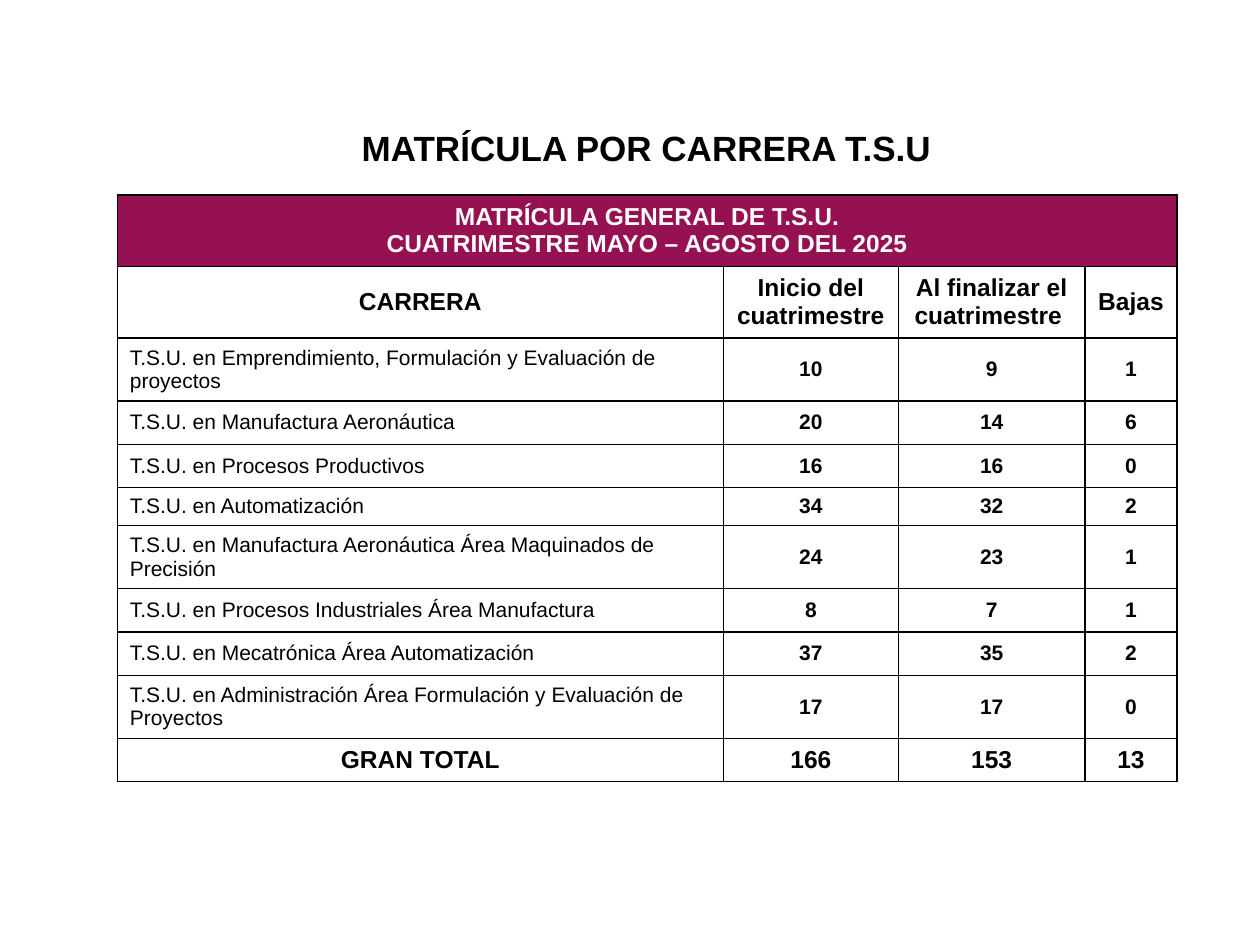
import dataclasses

import lxml.etree
import pptx
import pptx.dml.color
import pptx.enum.text
import pptx.oxml.ns
import pptx.util

Pt = pptx.util.Pt
CENTER = pptx.enum.text.PP_ALIGN.CENTER
LEFT = pptx.enum.text.PP_ALIGN.LEFT
MIDDLE = pptx.enum.text.MSO_ANCHOR.MIDDLE


@dataclasses.dataclass(frozen=True)
class Theme:
    font: str = "Arial"
    black: str = "000000"
    white: str = "FFFFFF"
    banner: str = "961151"
    title_size: float = 20
    heading_size: float = 14
    body_size: float = 12
    border_width: float = 1


class SlideBuilder:
    def __init__(self, slide, theme):
        self.slide = slide
        self.theme = theme

    def set_text(self, text_frame, text, size, color, bold=True, alignment=CENTER):
        text_frame.text = text
        text_frame.word_wrap = True
        for paragraph in text_frame.paragraphs:
            paragraph.alignment = alignment
            paragraph.font.name = self.theme.font
            paragraph.font.size = Pt(size)
            paragraph.font.bold = bold
            paragraph.font.color.rgb = pptx.dml.color.RGBColor.from_string(color)

    def title(self, text, left, top, width, height):
        shape = self.slide.shapes.title
        shape.left, shape.top = Pt(left), Pt(top)
        shape.width, shape.height = Pt(width), Pt(height)
        self.set_text(shape.text_frame, text, self.theme.title_size, self.theme.black)
        shape.text_frame.auto_size = pptx.enum.text.MSO_AUTO_SIZE.SHAPE_TO_FIT_TEXT

    def table(self, left, top, widths, heights):
        shape = self.slide.shapes.add_table(
            len(heights), len(widths), Pt(left), Pt(top), Pt(sum(widths)), Pt(sum(heights)))
        table = shape.table
        table.first_row = table.horz_banding = False
        for column, width in zip(table.columns, widths):
            column.width = Pt(width)
        for row, height in zip(table.rows, heights):
            row.height = Pt(height)
        for cell in table.iter_cells():
            self.borders(cell)
            self.fill(cell, self.theme.white)
            cell.vertical_anchor = MIDDLE
        return table

    def fill(self, cell, color):
        cell.fill.solid()
        cell.fill.fore_color.rgb = pptx.dml.color.RGBColor.from_string(color)

    def borders(self, cell):
        qn = pptx.oxml.ns.qn
        properties = cell._tc.get_or_add_tcPr()
        for side in ("a:lnL", "a:lnR", "a:lnT", "a:lnB"):
            line = lxml.etree.SubElement(
                properties, qn(side), w=str(Pt(self.theme.border_width)))
            solid = lxml.etree.SubElement(line, qn("a:solidFill"))
            lxml.etree.SubElement(solid, qn("a:srgbClr"), val=self.theme.black)

    def banner(self, table, text):
        cell = table.cell(0, 0)
        cell.merge(table.cell(0, len(table.columns) - 1))
        self.fill(cell, self.theme.banner)
        self.set_text(cell.text_frame, text, self.theme.heading_size, self.theme.white)

    def heading_row(self, table, row, values):
        for column, value in enumerate(values):
            self.set_text(table.cell(row, column).text_frame, str(value),
                          self.theme.heading_size, self.theme.black)

    def program_row(self, table, row, values):
        for column, value in enumerate(values):
            is_name = column == 0
            self.set_text(table.cell(row, column).text_frame, str(value),
                          self.theme.body_size, self.theme.black,
                          bold=not is_name, alignment=LEFT if is_name else CENTER)


HEADINGS = ("CARRERA", "Inicio del cuatrimestre ", "Al finalizar el cuatrimestre ", "Bajas")
PROGRAMS = (
    ("T.S.U. en Emprendimiento, Formulación y Evaluación de proyectos", 10, 9, 1),
    ("T.S.U. en Manufactura Aeronáutica", 20, 14, 6),
    ("T.S.U. en Procesos Productivos", 16, 16, 0),
    ("T.S.U. en Automatización", 34, 32, 2),
    ("T.S.U. en Manufactura Aeronáutica Área Maquinados de Precisión", 24, 23, 1),
    ("T.S.U. en Procesos Industriales Área Manufactura", 8, 7, 1),
    ("T.S.U. en Mecatrónica Área Automatización", 37, 35, 2),
    ("T.S.U. en Administración Área Formulación y Evaluación de Proyectos", 17, 17, 0),
)
TOTALS = ("GRAN TOTAL", 166, 153, 13)
HEADER, DOUBLE, SINGLE, COMPACT = 40.8, 36, 24.8, 21.6
ROW_HEIGHTS = (HEADER, HEADER, DOUBLE, SINGLE, SINGLE, COMPACT,
               DOUBLE, SINGLE, SINGLE, DOUBLE, SINGLE)
COLUMN_WIDTHS = (346.3, 100.1, 106.6, 52.6)


def main():
    presentation = pptx.Presentation()
    presentation.slide_width, presentation.slide_height = Pt(720), Pt(540)
    slide = presentation.slides.add_slide(presentation.slide_layouts[5])
    builder = SlideBuilder(slide, Theme())
    builder.title("MATRÍCULA POR CARRERA T.S.U", 154.1, 68.4, 430.6, 31.5)
    table = builder.table(67, 111.4, COLUMN_WIDTHS, ROW_HEIGHTS)
    builder.banner(table, "MATRÍCULA GENERAL DE T.S.U.\nCUATRIMESTRE MAYO – AGOSTO DEL 2025")
    builder.heading_row(table, 1, HEADINGS)
    for row, program in enumerate(PROGRAMS, start=2):
        builder.program_row(table, row, program)
    builder.heading_row(table, len(ROW_HEIGHTS) - 1, TOTALS)
    presentation.save("out.pptx")


if __name__ == "__main__":
    main()
